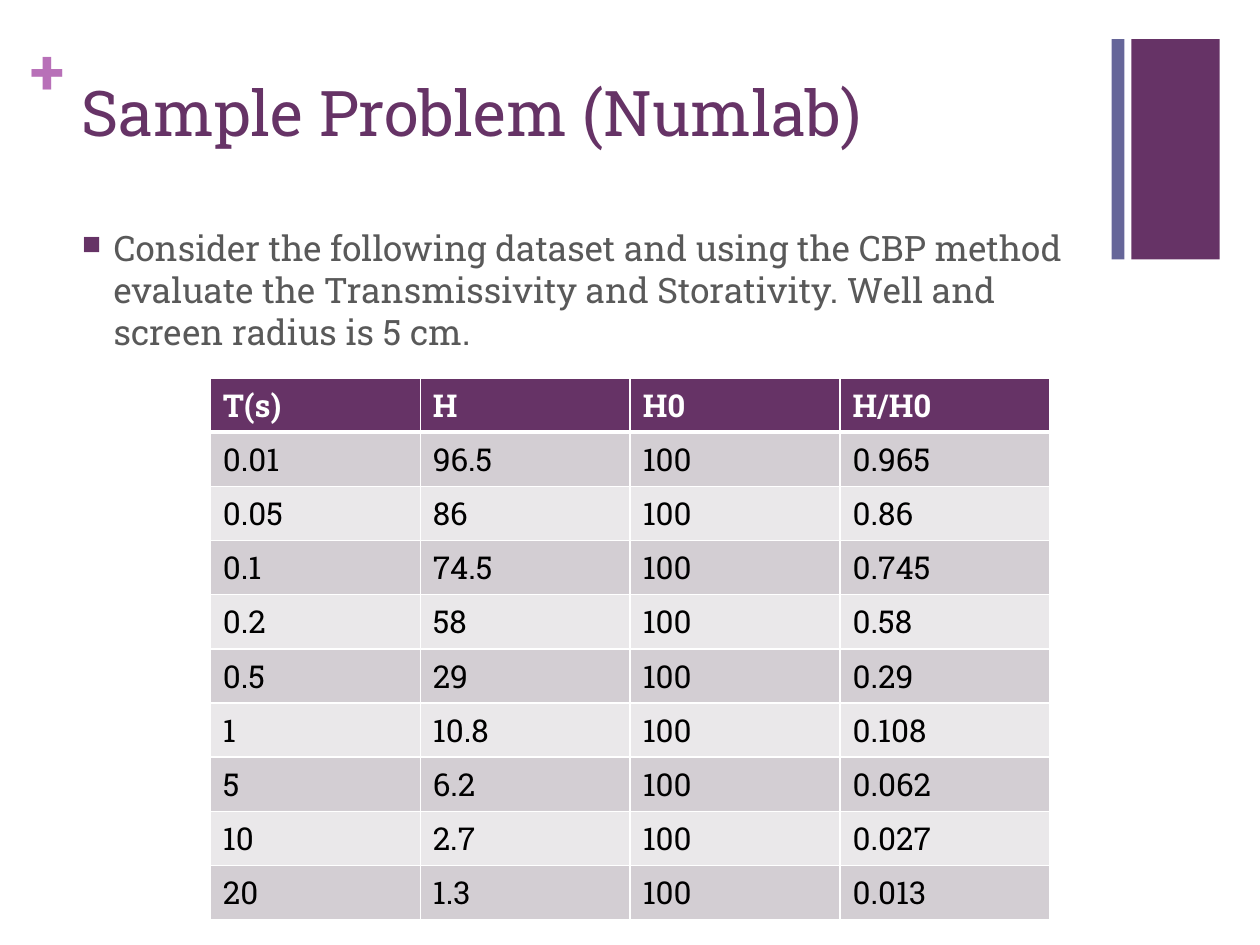
from dataclasses import dataclass

from lxml import etree
from pptx import Presentation
from pptx import util as u
from pptx.dml.color import RGBColor
from pptx.enum import shapes, text
from pptx.oxml.ns import qn


@dataclass(frozen=True)
class Theme:
    font: str = "Roboto Slab"
    plum: str = "663366"
    slate: str = "666699"
    orchid: str = "B870B8"
    body: str = "595959"
    black: str = "000000"
    white: str = "FFFFFF"
    bands: tuple = ("D3CED3", "EAE8EA")
    title_size: int = 36
    body_size: int = 20
    table_size: int = 18


THEME = Theme()

HEADINGS = ("T(s)", "H", "H0", "H/H0")
READINGS = (
    ("0.01", "96.5", "100", "0.965"),
    ("0.05", "86", "100", "0.86"),
    ("0.1", "74.5", "100", "0.745"),
    ("0.2", "58", "100", "0.58"),
    ("0.5", "29", "100", "0.29"),
    ("1", "10.8", "100", "0.108"),
    ("5", "6.2", "100", "0.062"),
    ("10", "2.7", "100", "0.027"),
    ("20", "1.3", "100", "0.013"),
)


def cm_box(*lengths):
    return tuple(u.Cm(length) for length in lengths)


def add_span(para, words, size, color, bold=False):
    span = para.add_run()
    span.text = words
    span.font.name = THEME.font
    span.font.size = u.Pt(size)
    span.font.bold = bold
    span.font.color.rgb = RGBColor.from_string(color)


def add_text(page, box, words, size, color, bold=False):
    """Add a wrapping, top-anchored text box and return its frame."""
    frame = page.shapes.add_textbox(*box).text_frame
    frame.word_wrap = True
    frame.vertical_anchor = text.MSO_ANCHOR.TOP
    add_span(frame.paragraphs[0], words, size, color, bold)
    return frame


def add_corner_bars(page, box):
    """Fill the box with a narrow bar, a gap and a wide bar."""
    left, top, width, height = box
    narrow, wide = u.Cm(0.26), u.Cm(1.78)
    bars = ((left, narrow, THEME.slate), (left + width - wide, wide, THEME.plum))
    for bar_left, bar_width, color in bars:
        bar = page.shapes.add_shape(
            shapes.MSO_SHAPE.RECTANGLE, bar_left, top, bar_width, height)
        bar.shadow.inherit = False
        bar.fill.solid()
        bar.fill.fore_color.rgb = RGBColor.from_string(color)
        bar.line.fill.background()


def add_plus(page, box):
    frame = add_text(page, box, "+", THEME.title_size, THEME.orchid, bold=True)
    frame.margin_left = frame.margin_right = 0
    frame.margin_top = frame.margin_bottom = 0


def add_title(page, box):
    add_text(page, box, "Sample Problem (Numlab)", THEME.title_size, THEME.plum)


def add_task(page, box):
    frame = add_text(
        page, box,
        "Consider the following dataset and using the CBP method evaluate the "
        "Transmissivity and Storativity. Well and screen radius is 5 cm.",
        THEME.body_size, THEME.body)
    para = frame.paragraphs[0]
    para.line_spacing = 1.0
    add_square_bullet(para, u.Cm(0.64))


def add_square_bullet(para, indent):
    """Hang a bullet; the letter n is a square in Wingdings."""
    props = para._p.get_or_add_pPr()
    props.set("marL", str(indent))
    props.set("indent", str(-indent))
    color = etree.SubElement(props, qn("a:buClr"))
    etree.SubElement(color, qn("a:srgbClr"), val=THEME.plum)
    etree.SubElement(props, qn("a:buSzPct"), val="75000")
    etree.SubElement(props, qn("a:buFont"), typeface="Wingdings", charset="2")
    etree.SubElement(props, qn("a:buChar"), char="n")


def set_borders(cell, top, bottom):
    """Draw white cell edges, with the upper and lower widths in points."""
    props = cell._tc.get_or_add_tcPr()
    edges = (("a:lnL", 1), ("a:lnR", 1), ("a:lnT", top), ("a:lnB", bottom))
    for place, (tag, points) in enumerate(edges):
        line = etree.Element(qn(tag), w=str(u.Pt(points)))
        fill = etree.SubElement(line, qn("a:solidFill"))
        etree.SubElement(fill, qn("a:srgbClr"), val=THEME.white)
        props.insert(place, line)


def add_readings(page, box):
    rows = (HEADINGS, *READINGS)
    table = page.shapes.add_table(len(rows), len(HEADINGS), *box).table
    for row_index, row in enumerate(rows):
        header = row_index == 0
        fill = THEME.plum if header else THEME.bands[(row_index - 1) % 2]
        color = THEME.white if header else THEME.black
        for column_index, words in enumerate(row):
            cell = table.cell(row_index, column_index)
            cell.fill.solid()
            cell.fill.fore_color.rgb = RGBColor.from_string(fill)
            add_span(cell.text_frame.paragraphs[0], words,
                     THEME.table_size, color, bold=header)
            set_borders(cell, top=3 if row_index == 1 else 1,
                        bottom=3 if header else 1)


def main():
    deck = Presentation()
    deck.slide_width, deck.slide_height = u.Cm(25.4), u.Cm(19.05)
    page = deck.slides.add_slide(deck.slide_layouts[6])
    add_corner_bars(page, cm_box(22.41, 0.79, 2.18, 4.44))
    add_plus(page, cm_box(0.61, 0.64, 0.74, 1.55))
    add_title(page, cm_box(1.4, 1.35, 20.98, 3.1))
    add_task(page, cm_box(1.4, 4.45, 20.98, 11.5))
    add_readings(page, cm_box(4.24, 7.62, 16.93, 10.92))
    deck.save("out.pptx")


if __name__ == "__main__":
    main()
